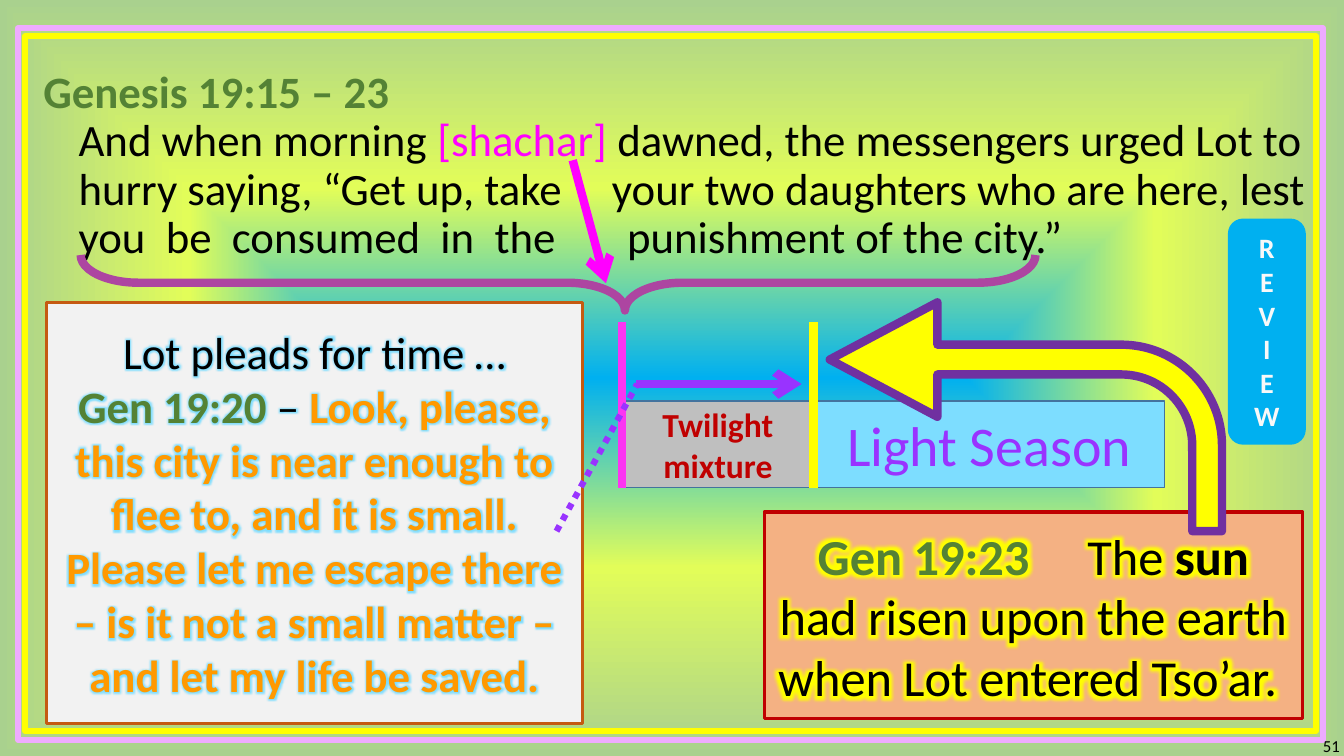
from dataclasses import dataclass

from pptx import Presentation
from pptx.dml.color import RGBColor
from pptx.enum.dml import MSO_LINE
from pptx.enum.shapes import MSO_CONNECTOR, MSO_SHAPE
from pptx.enum.text import MSO_ANCHOR, PP_ALIGN
from pptx.oxml import parse_xml
from pptx.oxml.ns import nsdecls
from pptx.util import Inches, Pt


@dataclass(frozen=True)
class Theme:
    font: str = "Calibri"
    black: str = "000000"
    green: str = "548235"
    magenta: str = "FF00FF"
    pink: str = "FB35F2"
    violet: str = "9933FF"
    purple: str = "7030A0"
    plum: str = "AD45A1"
    yellow: str = "FFFF00"
    orange: str = "FF9900"
    red: str = "C00000"
    sky: str = "7DDDFF"
    azure: str = "00B0F0"
    steel: str = "43739E"
    gray: str = "BFBFBF"
    paper: str = "F2F2F2"
    white: str = "F8F8F8"
    peach: str = "F4B183"
    rust: str = "C55A11"
    lilac: str = "EFABFF"
    verse: int = 32
    sun: int = 36
    season: int = 40
    twilight: int = 24
    review: int = 20
    number: int = 12


T = Theme()

# Paragraphs are lists of runs: (text, colour, bold[, letter spacing in points])
HEADING = [[("Genesis 19:15 – 23", T.green, True)]]
VERSE = [
    [("And when morning ", T.black, False), ("[shachar] ", T.magenta, False),
     ("dawned, the messengers urged Lot to", T.black, False)],
    [("hurry saying, “Get up, take\tyour two daughters who are here, lest", T.black, False)],
    [("you  be  consumed  in  the\tpunishment of the city.”", T.black, False)],
]
VERSE_TABS = [None, 5.29, 5.44]
PLEA = [
    [("Lot pleads for time …", T.black, False)],
    [("Gen 19:20 ", T.green, True), ("– ", T.black, False),
     ("Look, please, this city is near enough to flee to, and it is small. "
      "Please let me escape there – is it not a small matter – "
      "and let my life be saved.", T.orange, True)],
]
SUNRISE = [[
    ("Gen 19:23", T.green, True), (" ", T.black, False, 33), ("The ", T.black, False),
    ("sun", T.black, True),
    (" had risen upon the earth when Lot entered Tso’ar. ", T.black, False),
]]
LIGHT = [[("Light Season", T.violet, False)]]
TWILIGHT = [[(word, T.red, True)] for word in ("Twilight", "mixture")]
REVIEW = [[(letter, T.white, True, 1.5)] for letter in "REVIEW"]
NUMBER = [[("51", T.black, False)]]

BACKGROUND = [(0, "00B0F0"), (50, "E2FD59"), (100, "A9D18E")]

# Timeline: dawn, sunrise and the end of the bar, left to right
DAWN, SUNUP, BAR_END = 6.17, 8.07, 11.55
BAR_TOP, BAR_H, MARK_TOP = 3.98, 0.86, 3.19
BAR_BOTTOM = BAR_TOP + BAR_H
POINTER_Y = 3.81


def rgb(value):
    return RGBColor.from_string(value)


def set_background(s, stops):
    gs = "".join(f'<a:gs pos="{pos * 1000}"><a:srgbClr val="{color}"/></a:gs>'
                 for pos, color in stops)
    s.element.cSld.insert(0, parse_xml(
        f'<p:bg {nsdecls("p", "a")}><p:bgPr><a:gradFill><a:gsLst>{gs}</a:gsLst>'
        '<a:path path="shape"><a:fillToRect l="50000" t="50000" r="50000" b="50000"/>'
        '</a:path></a:gradFill><a:effectLst/></p:bgPr></p:bg>'))


def add_glow(r, color, radius):
    r.font.fill._xPr.solidFill.addnext(parse_xml(
        f'<a:effectLst {nsdecls("a")}><a:glow rad="{Pt(radius)}">'
        f'<a:srgbClr val="{color}"/></a:glow></a:effectLst>'))


def write(sp, paragraphs, size, align=PP_ALIGN.CENTER, anchor=MSO_ANCHOR.MIDDLE,
          spacing=None, glow=None, tabs=(), inset=None):
    tf = sp.text_frame
    tf.word_wrap = True
    tf.vertical_anchor = anchor
    if inset is not None:
        tf.margin_left = tf.margin_right = tf.margin_top = tf.margin_bottom = Inches(inset)
    for i, runs in enumerate(paragraphs):
        p = tf.paragraphs[0] if i == 0 else tf.add_paragraph()
        p.alignment = align
        if spacing:
            p.line_spacing = spacing
        if tabs and tabs[i]:
            p._p.get_or_add_pPr().append(parse_xml(
                f'<a:tabLst {nsdecls("a")}><a:tab pos="{Inches(tabs[i])}" algn="l"/></a:tabLst>'))
        for text, color, bold, *tracking in runs:
            r = p.add_run()
            r.text = text
            r.font.size, r.font.bold, r.font.name = Pt(size), bold, T.font
            r.font.color.rgb = rgb(color)
            if tracking:
                r.font._element.set("spc", str(int(tracking[0] * 100)))
            if glow:
                add_glow(r, *glow)


def add_box(s, kind, at, line, width, fill=None, adjust=()):
    sp = s.shapes.add_shape(kind, *map(Inches, at))
    sp.shadow.inherit = False
    if fill:
        sp.fill.solid()
        sp.fill.fore_color.rgb = rgb(fill)
    else:
        sp.fill.background()
    sp.line.color.rgb = rgb(line)
    sp.line.width = Pt(width)
    for i, value in enumerate(adjust):
        sp.adjustments[i] = value
    return sp


def add_line(s, start, end, color, width, arrow=False, dash=None):
    c = s.shapes.add_connector(MSO_CONNECTOR.STRAIGHT, *map(Inches, start + end))
    c.line.color.rgb = rgb(color)
    c.line.width = Pt(width)
    if dash:
        c.line.dash_style = dash
    spPr = c._element.spPr
    if arrow:
        spPr.ln.append(parse_xml(f'<a:tailEnd {nsdecls("a")} type="arrow"/>'))
    spPr.append(parse_xml(f'<a:effectLst {nsdecls("a")}/>'))


def add_text(s, at, paragraphs, size, **options):
    write(s.shapes.add_textbox(*map(Inches, at)), paragraphs, size, **options)


def main():
    prs = Presentation()
    prs.slide_width, prs.slide_height = Inches(13.33), Inches(7.5)
    s = prs.slides.add_slide(prs.slide_layouts[6])
    set_background(s, BACKGROUND)
    rect = MSO_SHAPE.RECTANGLE

    add_box(s, rect, (0.18, 0.28, 12.94, 7.06), T.lilac, 4.5)
    add_box(s, rect, (0.25, 0.36, 12.8, 6.89), T.yellow, 4.5)
    passage = dict(align=PP_ALIGN.LEFT, anchor=MSO_ANCHOR.TOP, spacing=0.9, inset=0)
    add_text(s, (0.43, 0.69, 6, 0.48), HEADING, T.verse, **passage)
    add_text(s, (0.78, 1.17, 12.5, 1.46), VERSE, T.verse, tabs=VERSE_TABS, **passage)

    light = add_box(s, rect, (SUNUP, BAR_TOP, BAR_END - SUNUP, BAR_H), T.steel, 1, T.sky)
    write(light, LIGHT, T.season)
    twilight = add_box(s, rect, (DAWN, BAR_TOP, SUNUP - DAWN, BAR_H), T.steel, 1, T.gray)
    write(twilight, TWILIGHT, T.twilight)
    for x, color in ((SUNUP, T.yellow), (DAWN, T.pink)):
        add_line(s, (x, BAR_BOTTOM), (x, MARK_TOP), color, 6)

    brace = add_box(s, MSO_SHAPE.RIGHT_BRACE, (5.26, -1.93, 0.55, 9.47), T.plum, 6,
                    adjust=(1.04, 0.43))
    brace.rotation = 90

    plea = add_box(s, rect, (0.46, 3, 5.32, 4.18), T.rust, 2.25, T.paper)
    write(plea, PLEA, T.verse, glow=(T.sky, 5))
    sunrise = add_box(s, rect, (7.58, 5.08, 5.34, 2.05), T.red, 2.25, T.peach)
    write(sunrise, SUNRISE, T.sun, glow=(T.yellow, 11))

    bent = add_box(s, MSO_SHAPE.BENT_ARROW, (8.23, 3, 3.89, 2.27), T.purple, 6, T.yellow,
                   (0.13, 0.25, 0.47, 0.44))
    bent._element.spPr.xfrm.set("flipH", "1")

    add_line(s, (5.68, 1.59), (6.01, 2.81), T.magenta, 6, arrow=True)
    add_line(s, (5.52, 5.27), (6.32, POINTER_Y), T.violet, 4.5, dash=MSO_LINE.ROUND_DOT)
    add_line(s, (6.31, POINTER_Y), (7.95, POINTER_Y), T.violet, 6, arrow=True)

    add_text(s, (12.33, 7.3, 1, 0.2), NUMBER, T.number, align=PP_ALIGN.RIGHT, inset=0.04)
    review = add_box(s, MSO_SHAPE.ROUNDED_RECTANGLE, (12.21, 2.2, 0.71, 2.18),
                     T.azure, 4.5, T.azure)
    write(review, REVIEW, T.review)
    prs.save("out.pptx")


if __name__ == "__main__":
    main()
